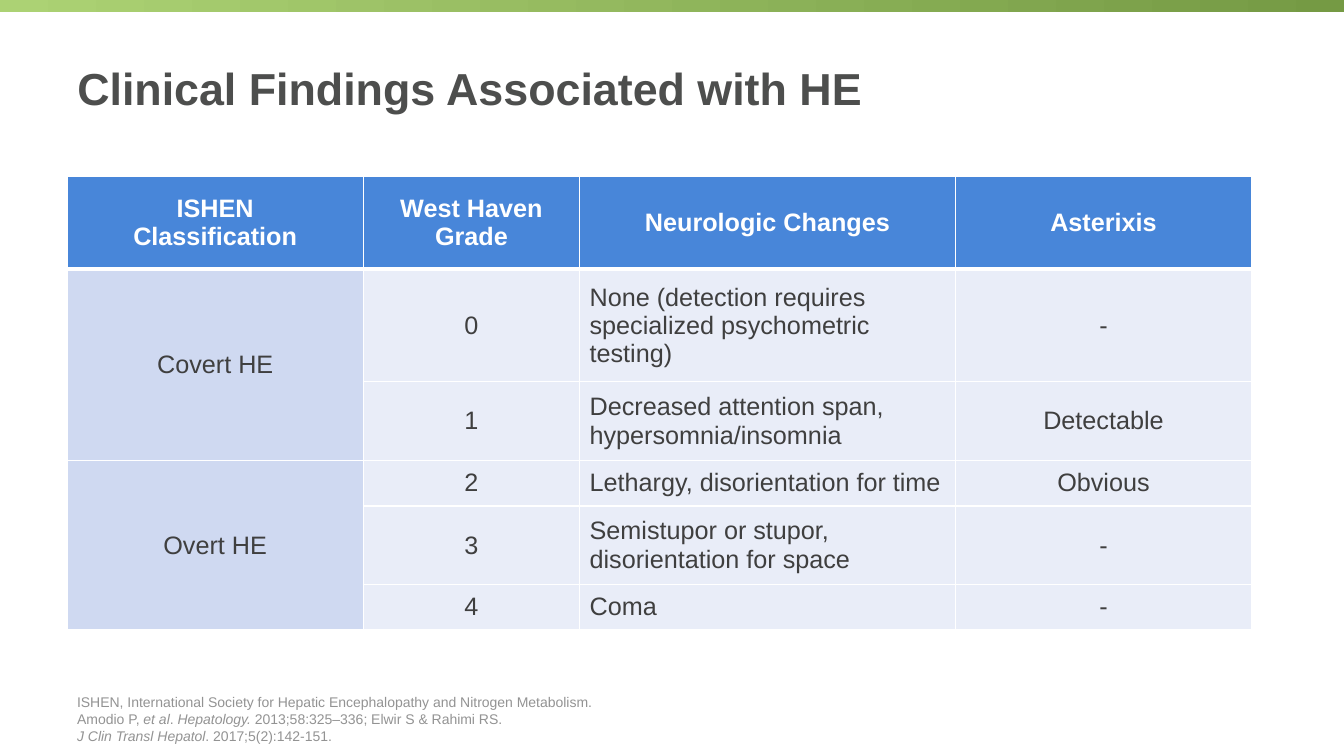
"""Build a slide with a table of clinical findings in hepatic encephalopathy."""
from dataclasses import dataclass

from lxml import etree
from pptx import Presentation
from pptx import util as u
from pptx.dml.color import RGBColor
from pptx.enum import shapes, text
from pptx.oxml import ns

FONT = "Arial"
COLORS = {
    "bar_light": "ACD274",
    "bar_dark": "759A44",
    "title": "4D4E4D",
    "header": "4886D9",
    "class": "CFD9F1",
    "body": "E9EDF8",
    "white": "FFFFFF",
    "text": "3F3F3F",
    "source": "939393",
}
LEFT, WIDTH = 48, 846
COLUMN_WIDTHS = (211.5, 154.5, 268.5, 211.5)
ROW_HEIGHTS = (66.2, 80.6, 56.2, 32.4, 56.2, 32.4)
FINDINGS_COLUMN = 2
HEADERS = ("ISHEN\nClassification", "West Haven\nGrade", "Neurologic Changes", "Asterixis")


@dataclass(frozen=True)
class Grade:
    """One West Haven grade with its findings."""

    number: str
    changes: str
    asterixis: str


@dataclass(frozen=True)
class Classification:
    """An ISHEN class and the grades it covers."""

    name: str
    grades: tuple[Grade, ...]


@dataclass(frozen=True)
class Span:
    """A stretch of source text."""

    words: str
    italic: bool = False


CLASSES = (
    Classification("Covert HE", (
        Grade("0", "None (detection requires specialized psychometric testing)", "-"),
        Grade("1", "Decreased attention span, hypersomnia/insomnia", "Detectable"),
    )),
    Classification("Overt HE", (
        Grade("2", "Lethargy, disorientation for time", "Obvious"),
        Grade("3", "Semistupor or stupor, disorientation for space", "-"),
        Grade("4", "Coma", "-"),
    )),
)
SOURCES = (
    (
        Span("ISHEN, International Society for Hepatic Encephalopathy and Nitrogen Metabolism.\v"
             "Amodio P, "),
        Span("et al", True),
        Span(". "),
        Span("Hepatology.", True),
        Span(" 2013;58:325–336; Elwir S & Rahimi RS."),
    ),
    (Span("J Clin Transl Hepatol", True), Span(". 2017;5(2):142-151.")),
)


def color(name: str) -> RGBColor:
    """Look up a named colour."""
    return RGBColor.from_string(COLORS[name])


def style(para, size: float, ink: str, bold: bool = False) -> None:
    """Set the font of a paragraph."""
    para.font.name = FONT
    para.font.size = u.Pt(size)
    para.font.bold = bold
    para.font.color.rgb = color(ink)


def place(box, left: float, top: float, width: float, height: float) -> None:
    """Position a shape, in points."""
    box.left, box.top = u.Pt(left), u.Pt(top)
    box.width, box.height = u.Pt(width), u.Pt(height)


def draw_bar(page, width: int) -> None:
    """Draw the gradient bar along the top edge."""
    bar = page.shapes.add_shape(shapes.MSO_SHAPE.RECTANGLE, 0, 0, width, u.Pt(8.64))
    bar.shadow.inherit = False
    bar.line.fill.background()
    bar.fill.gradient()
    bar.fill.gradient_angle = 0
    for stop, name in zip(bar.fill.gradient_stops, ("bar_light", "bar_dark")):
        stop.color.rgb = color(name)


def draw_title(page) -> None:
    """Fill and format the title placeholder."""
    title = page.shapes.title
    place(title, LEFT, 16, WIDTH, 93.6)
    frame = title.text_frame
    frame.text = "Clinical Findings Associated with HE"
    frame.vertical_anchor = text.MSO_ANCHOR.MIDDLE
    para = frame.paragraphs[0]
    para.alignment = text.PP_ALIGN.LEFT
    style(para, 32, "title", True)


def border_cell(cell, bottom: float) -> None:
    """Give a cell white borders."""
    properties = cell._tc.get_or_add_tcPr()
    sides = (("lnL", 1), ("lnR", 1), ("lnT", 1), ("lnB", bottom))
    for index, (side, width) in enumerate(sides):
        line = etree.Element(ns.qn(f"a:{side}"), w=str(u.Pt(width)))
        fill = etree.SubElement(line, ns.qn("a:solidFill"))
        etree.SubElement(fill, ns.qn("a:srgbClr"), val=COLORS["white"])
        properties.insert(index, line)


def fill_cell(cell, words: str, fill: str, centred: bool = True) -> None:
    """Write and format one table cell."""
    header = fill == "header"
    cell.text = words
    cell.vertical_anchor = text.MSO_ANCHOR.MIDDLE
    cell.fill.solid()
    cell.fill.fore_color.rgb = color(fill)
    for para in cell.text_frame.paragraphs:
        para.alignment = text.PP_ALIGN.CENTER if centred else text.PP_ALIGN.LEFT
        style(para, 18, "white" if header else "text", header)
    border_cell(cell, 3 if header else 1)


def draw_table(page) -> None:
    """Draw the table of findings by class and grade."""
    table = page.shapes.add_table(
        len(ROW_HEIGHTS), len(COLUMN_WIDTHS),
        u.Pt(LEFT), u.Pt(126), u.Pt(WIDTH), u.Pt(sum(ROW_HEIGHTS)),
    ).table
    for column, width in zip(table.columns, COLUMN_WIDTHS):
        column.width = u.Pt(width)
    for row, height in zip(table.rows, ROW_HEIGHTS):
        row.height = u.Pt(height)
    for column, words in enumerate(HEADERS):
        fill_cell(table.cell(0, column), words, "header")
    row = 1
    for group in CLASSES:
        first = table.cell(row, 0)
        first.merge(table.cell(row + len(group.grades) - 1, 0))
        fill_cell(first, group.name, "class")
        for grade in group.grades:
            values = (grade.number, grade.changes, grade.asterixis)
            for column, words in enumerate(values, 1):
                fill_cell(table.cell(row, column), words, "body", column != FINDINGS_COLUMN)
            row += 1


def draw_sources(page) -> None:
    """Write the abbreviation and citations at the foot."""
    box = page.shapes.add_textbox(u.Pt(LEFT), u.Pt(500.4), u.Pt(WIDTH), u.Pt(34.6))
    frame = box.text_frame
    frame.word_wrap = True
    frame.vertical_anchor = text.MSO_ANCHOR.BOTTOM
    for index, source in enumerate(SOURCES):
        para = frame.add_paragraph() if index else frame.paragraphs[0]
        style(para, 10, "source")
        for span in source:
            for part, words in enumerate(span.words.split("\v")):
                if part:
                    para.add_line_break()
                run = para.add_run()
                run.text = words
                run.font.italic = span.italic


def main() -> None:
    """Build and save the deck."""
    deck = Presentation()
    deck.slide_width, deck.slide_height = u.Pt(960), u.Pt(540)
    page = deck.slides.add_slide(deck.slide_layouts[5])
    draw_bar(page, deck.slide_width)
    draw_title(page)
    draw_table(page)
    draw_sources(page)
    deck.save("out.pptx")


if __name__ == "__main__":
    main()
